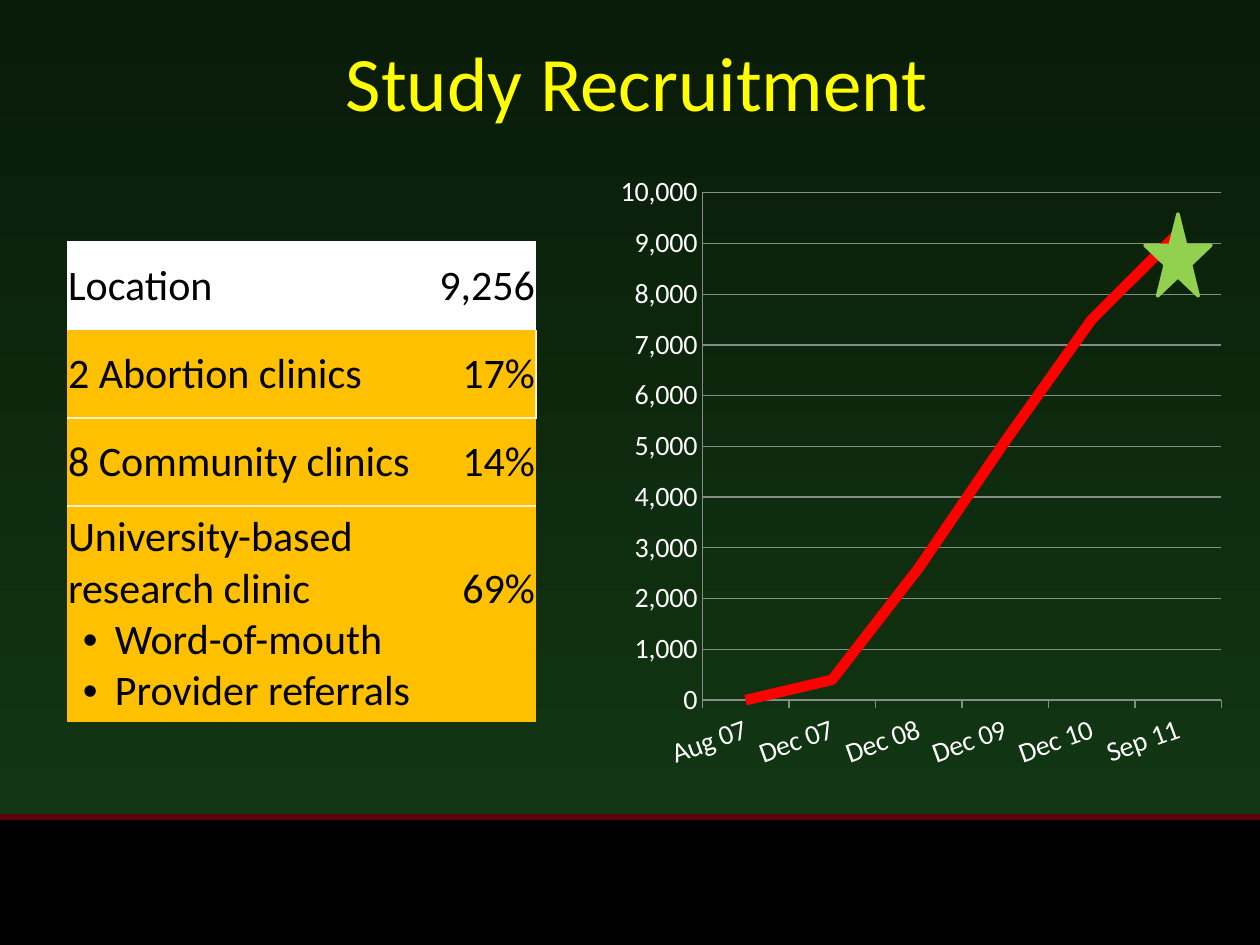
import pptx
import pptx.chart.data
import pptx.dml.color
import pptx.enum.chart
import pptx.enum.shapes
import pptx.enum.text
import pptx.oxml
import pptx.oxml.ns
import pptx.util
from lxml import etree

RGBColor = pptx.dml.color.RGBColor
BLACK = RGBColor(0x00, 0x00, 0x00)
WHITE = RGBColor(0xFF, 0xFF, 0xFF)
YELLOW = RGBColor(0xFF, 0xFF, 0x00)
RED = RGBColor(0xFF, 0x00, 0x00)
MAROON = RGBColor(0x5F, 0x00, 0x0F)
AMBER = RGBColor(0xFF, 0xC0, 0x00)
CREAM = RGBColor(0xFD, 0xF0, 0xD0)
STAR_GREEN = RGBColor(0x92, 0xD0, 0x50)
GRID_GRAY = RGBColor(0x86, 0x8C, 0x86)
DARK_GREEN = RGBColor(0x09, 0x1B, 0x09)
DEEP_GREEN = RGBColor(0x13, 0x3A, 0x14)

FONT = "Calibri"
PX_PER_INCH = 126
LABEL_ANGLE = -20
PLAIN_TABLE_STYLE = "{2D5ABB26-0587-4C30-8999-92F81FD0307C}"
MIDDLE = pptx.enum.text.MSO_ANCHOR.MIDDLE
ALIGN = pptx.enum.text.PP_ALIGN

# Location, share, sides that carry a rule, sub-items
LOCATIONS = [
    ("Location", "9,256", "", []),
    ("2 Abortion clinics", "17%", "B", []),
    ("8 Community clinics", "14%", "TB", []),
    ("University-based research clinic", "69%", "T",
     ["Word-of-mouth", "Provider referrals"]),
]
RECRUITED = {"Aug 07": 0, "Dec 07": 400, "Dec 08": 2600,
             "Dec 09": 5100, "Dec 10": 7500, "Sep 11": 9200}


def px(length):
    return pptx.util.Emu(round(length * 914400 / PX_PER_INCH))


def style_font(font, size, color):
    font.name = FONT
    font.size = pptx.util.Pt(size)
    font.color.rgb = color


def add_span(para, text, size, color):
    span = para.add_run()
    span.text = text
    style_font(span.font, size, color)


def add_solid(page, kind, box, color):
    shape = page.shapes.add_shape(kind, *map(px, box))
    shape.shadow.inherit = False
    shape.fill.solid()
    shape.fill.fore_color.rgb = color
    return shape


def add_backdrop(page, width, height, footer_top):
    # Green gradient from top to bottom
    fill = page.background.fill
    fill.gradient()
    fill.gradient_angle = 270
    for stop, color, position in zip(fill.gradient_stops,
                                     (DARK_GREEN, DEEP_GREEN), (0, 1)):
        stop.color.rgb = color
        stop.position = position
    # Black footer with a maroon rule on its upper edge
    footer = add_solid(page, pptx.enum.shapes.MSO_SHAPE.RECTANGLE,
                       (0, footer_top, width, height - footer_top), BLACK)
    footer.line.fill.background()
    rule_y = px(footer_top - 2)
    rule = page.shapes.add_connector(pptx.enum.shapes.MSO_CONNECTOR.STRAIGHT,
                                     0, rule_y, px(width), rule_y)
    rule.line.color.rgb = MAROON
    rule.line.width = pptx.util.Pt(3)
    etree.SubElement(rule._element.spPr, pptx.oxml.ns.qn("a:effectLst"))


def add_title(page, box, text):
    frame = page.shapes.add_textbox(*map(px, box)).text_frame
    frame.word_wrap = True
    frame.vertical_anchor = MIDDLE
    para = frame.paragraphs[0]
    para.alignment = ALIGN.CENTER
    add_span(para, text, 44, YELLOW)


def add_bullet(para):
    properties = para._p.get_or_add_pPr()
    properties.set("marL", str(px(47)))
    properties.set("indent", str(px(-32)))
    etree.SubElement(properties, pptx.oxml.ns.qn("a:buFont"), typeface="Arial")
    etree.SubElement(properties, pptx.oxml.ns.qn("a:buChar"), char="•")


def style_cell(cell, fill, sides):
    cell.vertical_anchor = MIDDLE
    cell.margin_left = cell.margin_right = cell.margin_top = px(1)
    cell.margin_bottom = 0
    properties = cell._tc.get_or_add_tcPr()
    for side in sides:
        properties.append(pptx.oxml.parse_xml(
            f'<a:ln{side} {pptx.oxml.ns.nsdecls("a")} w="12700"><a:solidFill>'
            f'<a:srgbClr val="{CREAM}"/></a:solidFill></a:ln{side}>'))
    cell.fill.solid()
    cell.fill.fore_color.rgb = fill


def add_location_table(page, box, widths, heights):
    table = page.shapes.add_table(len(heights), len(widths),
                                  *map(px, box)).table
    table.first_row = table.horz_banding = False
    style = table._tbl.tblPr.find(pptx.oxml.ns.qn("a:tableStyleId"))
    style.text = PLAIN_TABLE_STYLE
    for column, width in zip(table.columns, widths):
        column.width = px(width)
    for index, (place, share, sides, items) in enumerate(LOCATIONS):
        table.rows[index].height = px(heights[index])
        fill = WHITE if index == 0 else AMBER
        name_cell, share_cell = table.cell(index, 0), table.cell(index, 1)
        style_cell(name_cell, fill, sides)
        style_cell(share_cell, fill, "RB" if index == 1 else sides)
        add_span(name_cell.text_frame.paragraphs[0], place, 24, BLACK)
        for item in items:
            para = name_cell.text_frame.add_paragraph()
            add_bullet(para)
            add_span(para, item, 24, BLACK)
        if items:  # lift the share to the last line of the place name
            share_cell.margin_bottom = px(50)
        para = share_cell.text_frame.paragraphs[0]
        para.alignment = ALIGN.RIGHT
        add_span(para, share, 24, BLACK)


def set_plot_area(chart, left, top, width, height):
    plot_area = chart._chartSpace.chart.plotArea
    for old in plot_area.findall(pptx.oxml.ns.qn("c:layout")):
        plot_area.remove(old)
    settings = {"layoutTarget": "inner", "xMode": "edge", "yMode": "edge",
                "x": left, "y": top, "w": width, "h": height}
    parts = "".join(f'<c:{key} val="{value}"/>'
                    for key, value in settings.items())
    plot_area.insert(0, pptx.oxml.parse_xml(
        f'<c:layout {pptx.oxml.ns.nsdecls("c")}>'
        f'<c:manualLayout>{parts}</c:manualLayout></c:layout>'))


def add_recruitment_chart(page, box):
    data = pptx.chart.data.CategoryChartData(number_format="#,##0")
    data.categories = list(RECRUITED)
    data.add_series("Series 1", list(RECRUITED.values()))
    chart = page.shapes.add_chart(pptx.enum.chart.XL_CHART_TYPE.LINE,
                                  *map(px, box), data).chart
    chart.has_title = chart.has_legend = False
    style_font(chart.font, 18, DEEP_GREEN)
    set_plot_area(chart, 0.18, 0.04, 0.81, 0.82)
    # Axes
    dates, counts = chart.category_axis, chart.value_axis
    for axis in (dates, counts):
        style_font(axis.tick_labels.font, 16, WHITE)
        axis.format.line.color.rgb = GRID_GRAY
    label_body = dates._element.find(
        f'{pptx.oxml.ns.qn("c:txPr")}/{pptx.oxml.ns.qn("a:bodyPr")}')
    label_body.set("rot", str(LABEL_ANGLE * 60000))
    label_body.set("vert", "horz")
    dates.tick_label_position = pptx.enum.chart.XL_TICK_LABEL_POSITION.LOW
    dates.major_tick_mark = pptx.enum.chart.XL_TICK_MARK.OUTSIDE
    counts.major_tick_mark = pptx.enum.chart.XL_TICK_MARK.NONE
    counts.minimum_scale, counts.maximum_scale = 0, 10000
    counts.major_unit = 1000
    counts.tick_labels.number_format = "#,##0"
    counts.tick_labels.number_format_is_linked = False
    counts.major_gridlines.format.line.color.rgb = GRID_GRAY
    # Recruitment line
    chart.plots[0].vary_by_categories = False
    series = chart.plots[0].series[0]
    series.smooth = False
    series.marker.style = pptx.enum.chart.XL_MARKER_STYLE.NONE
    series.format.line.color.rgb = RED
    series.format.line.width = pptx.util.Pt(6)


def add_goal_star(page, box):
    star = add_solid(page, pptx.enum.shapes.MSO_SHAPE.STAR_5_POINT,
                     box, STAR_GREEN)
    star.line.color.rgb = STAR_GREEN
    star.line.width = pptx.util.Pt(2)


def main():
    deck = pptx.Presentation()
    deck.slide_width, deck.slide_height = px(1260), px(945)
    page = deck.slides.add_slide(deck.slide_layouts[6])
    add_backdrop(page, 1260, 945, 819)
    add_title(page, (63, 17, 1148, 127), "Study Recruitment")
    add_recruitment_chart(page, (587, 168, 641, 619))
    add_location_table(page, (67, 241, 469, 481), (348, 121),
                       (89, 88, 88, 216))
    add_goal_star(page, (1145, 214, 66, 82))
    deck.save("out.pptx")


if __name__ == "__main__":
    main()
